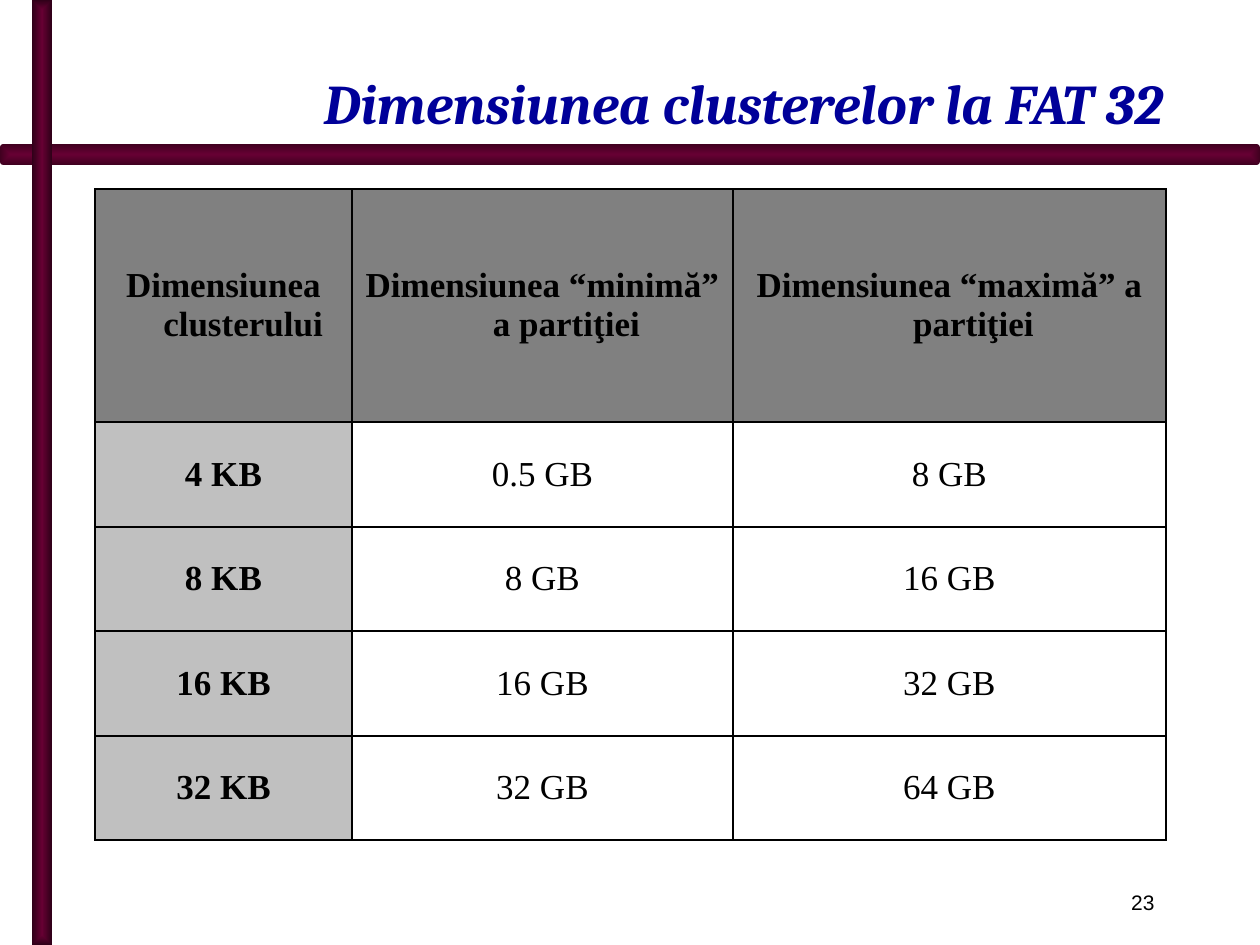
from typing import NamedTuple

from lxml import etree
from pptx import Presentation
from pptx import util as u
from pptx.dml.color import RGBColor
from pptx.enum import shapes, text
from pptx.oxml import parse_xml
from pptx.oxml.ns import nsdecls, qn

EMU_PER_PX = 914400 / 126


class Box(NamedTuple):
    left: int
    top: int
    width: int
    height: int


class Bar(NamedTuple):
    kind: shapes.MSO_SHAPE
    box: Box
    center: str
    edge: str


class Style(NamedTuple):
    font: str
    size: int
    color: str
    bold: bool = False
    italic: bool = False


class Label(NamedTuple):
    words: str
    box: Box
    anchor: text.MSO_ANCHOR
    style: Style


BARS = [
    Bar(shapes.MSO_SHAPE.ROUNDED_RECTANGLE, Box(0, 144, 1260, 21), "660033", "410020"),
    Bar(shapes.MSO_SHAPE.RECTANGLE, Box(32, 0, 20, 945), "660033", "2F0018"),
]
LABELS = [
    Label("23", Box(95, 883, 1072, 38), text.MSO_ANCHOR.TOP, Style("Arial", 12, "000000")),
    Label("Dimensiunea clusterelor la FAT 32", Box(105, 21, 1071, 121),
          text.MSO_ANCHOR.BOTTOM, Style("Cambria", 32, "000099", True, True)),
]
TABLE_LEFT, TABLE_TOP = 95, 189
COLUMN_WIDTHS = [257, 381, 433]
ROW_HEIGHTS = [233, 105, 104, 105, 104]
ROWS = [
    ["Dimensiunea clusterului ", "Dimensiunea “minimă” a partiţiei", "Dimensiunea “maximă” a partiţiei"],
    ["4 KB", "0.5 GB", "8 GB"],
    ["8 KB", "8 GB", "16 GB"],
    ["16 KB", "16 GB", "32 GB"],
    ["32 KB", "32 GB", "64 GB"],
]
HANGING_INDENT = 48


def px(length: int) -> u.Emu:
    return u.Emu(round(length * EMU_PER_PX))


def place(box: Box) -> list[u.Emu]:
    return [px(length) for length in box]


def rgb(color: str) -> RGBColor:
    return RGBColor.from_string(color)


def style_paragraph(paragraph, style: Style, alignment: text.PP_ALIGN) -> None:
    paragraph.alignment = alignment
    for run in paragraph.runs:
        run.font.name = style.font
        run.font.size = u.Pt(style.size)
        run.font.bold = style.bold
        run.font.italic = style.italic
        run.font.color.rgb = rgb(style.color)


def draw_bar(slide, bar: Bar) -> None:
    shape = slide.shapes.add_shape(bar.kind, *place(bar.box))
    shape.shadow.inherit = False
    shape.line.fill.background()
    shape.fill.gradient()
    for stop, color in zip(shape.fill.gradient_stops, (bar.center, bar.edge)):
        stop.color.rgb = rgb(color)
    gradient = shape.element.spPr.find(qn("a:gradFill"))
    gradient.remove(gradient.find(qn("a:lin")))
    gradient.append(parse_xml(
        f'<a:path {nsdecls("a")} path="shape">'
        '<a:fillToRect l="50000" t="50000" r="50000" b="50000"/></a:path>'))


def draw_label(slide, label: Label) -> None:
    frame = slide.shapes.add_textbox(*place(label.box)).text_frame
    frame.word_wrap = True
    frame.vertical_anchor = label.anchor
    frame.text = label.words
    style_paragraph(frame.paragraphs[0], label.style, text.PP_ALIGN.RIGHT)


def add_borders(cell) -> None:
    properties = cell._tc.get_or_add_tcPr()
    for index, side in enumerate(("lnL", "lnR", "lnT", "lnB")):
        line = etree.Element(qn(f"a:{side}"), w=str(u.Pt(1)))
        fill = etree.SubElement(line, qn("a:solidFill"))
        etree.SubElement(fill, qn("a:srgbClr"), val="000000")
        properties.insert(index, line)


def fill_cell(cell, words: str, row: int, column: int) -> None:
    cell.text = words
    cell.vertical_anchor = text.MSO_ANCHOR.MIDDLE
    if row == 0 or column == 0:
        cell.fill.solid()
        cell.fill.fore_color.rgb = rgb("808080" if row == 0 else "C0C0C0")
    else:
        cell.fill.background()
    paragraph = cell.text_frame.paragraphs[0]
    bold = row == 0 or column == 0
    style_paragraph(paragraph, Style("Times New Roman", 20, "000000", bold), text.PP_ALIGN.CENTER)
    properties = paragraph._p.get_or_add_pPr()
    properties.set("marL", str(px(HANGING_INDENT)))
    properties.set("indent", str(-px(HANGING_INDENT)))
    add_borders(cell)


def draw_table(slide) -> None:
    box = Box(TABLE_LEFT, TABLE_TOP, sum(COLUMN_WIDTHS), sum(ROW_HEIGHTS))
    table = slide.shapes.add_table(len(ROWS), len(COLUMN_WIDTHS), *place(box)).table
    table.first_row = False
    table.horz_banding = False
    for column, width in zip(table.columns, COLUMN_WIDTHS):
        column.width = px(width)
    for row, height in zip(table.rows, ROW_HEIGHTS):
        row.height = px(height)
    for row, values in enumerate(ROWS):
        for column, words in enumerate(values):
            fill_cell(table.cell(row, column), words, row, column)


def main() -> None:
    presentation = Presentation()
    presentation.slide_width, presentation.slide_height = px(1260), px(945)
    slide = presentation.slides.add_slide(presentation.slide_layouts[6])
    for bar in BARS:
        draw_bar(slide, bar)
    for label in LABELS:
        draw_label(slide, label)
    draw_table(slide)
    presentation.save("out.pptx")


if __name__ == "__main__":
    main()
